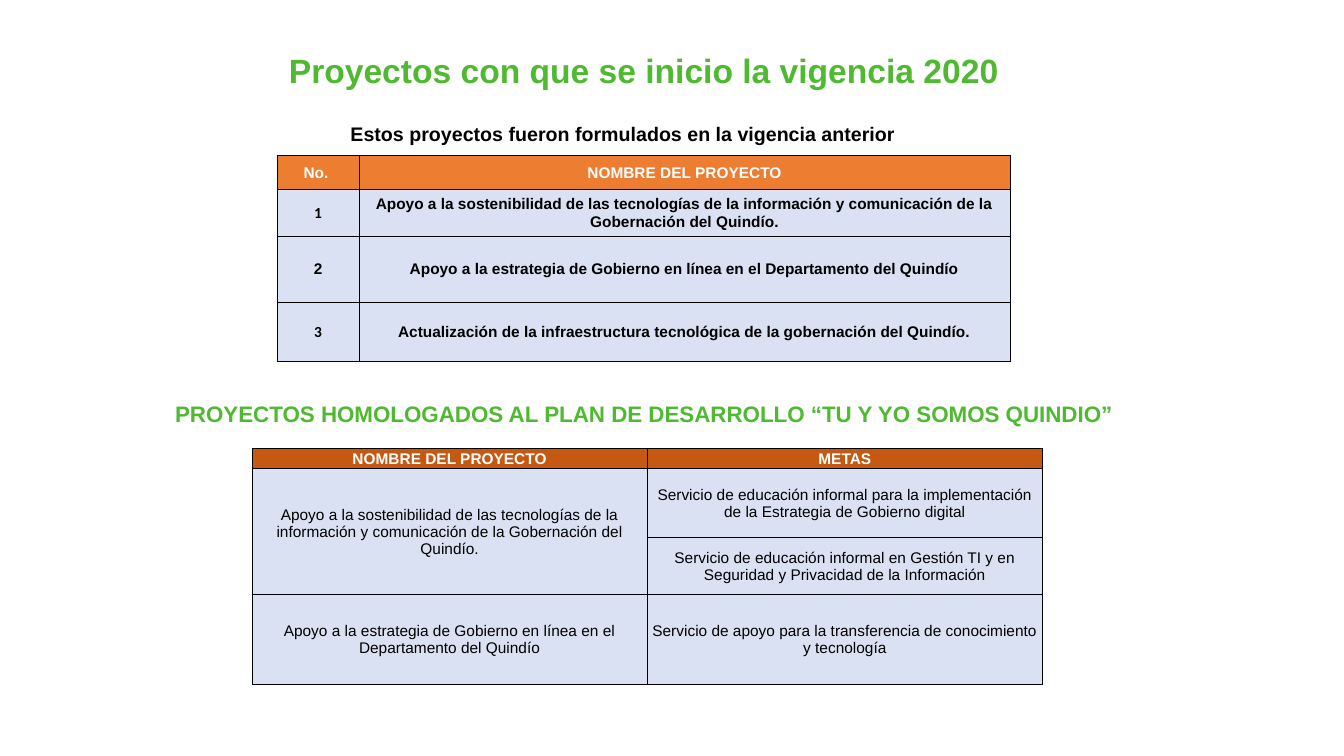
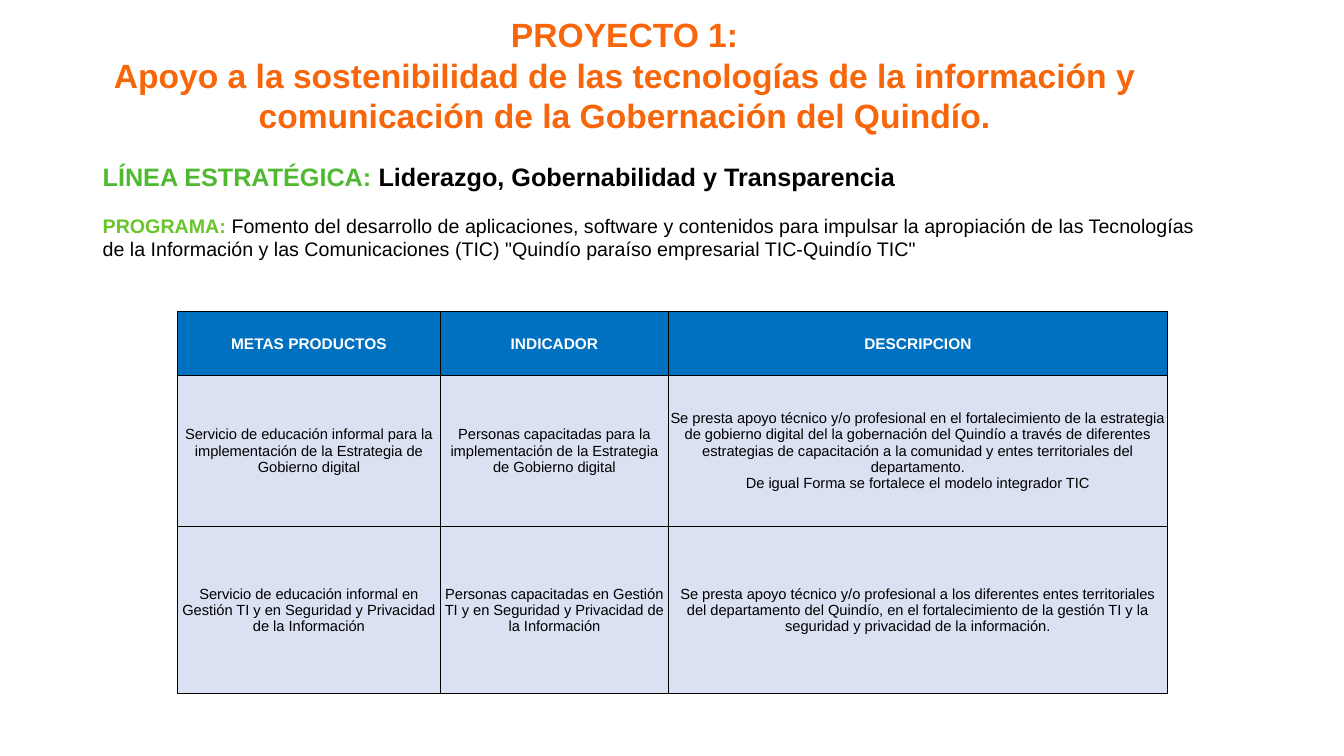
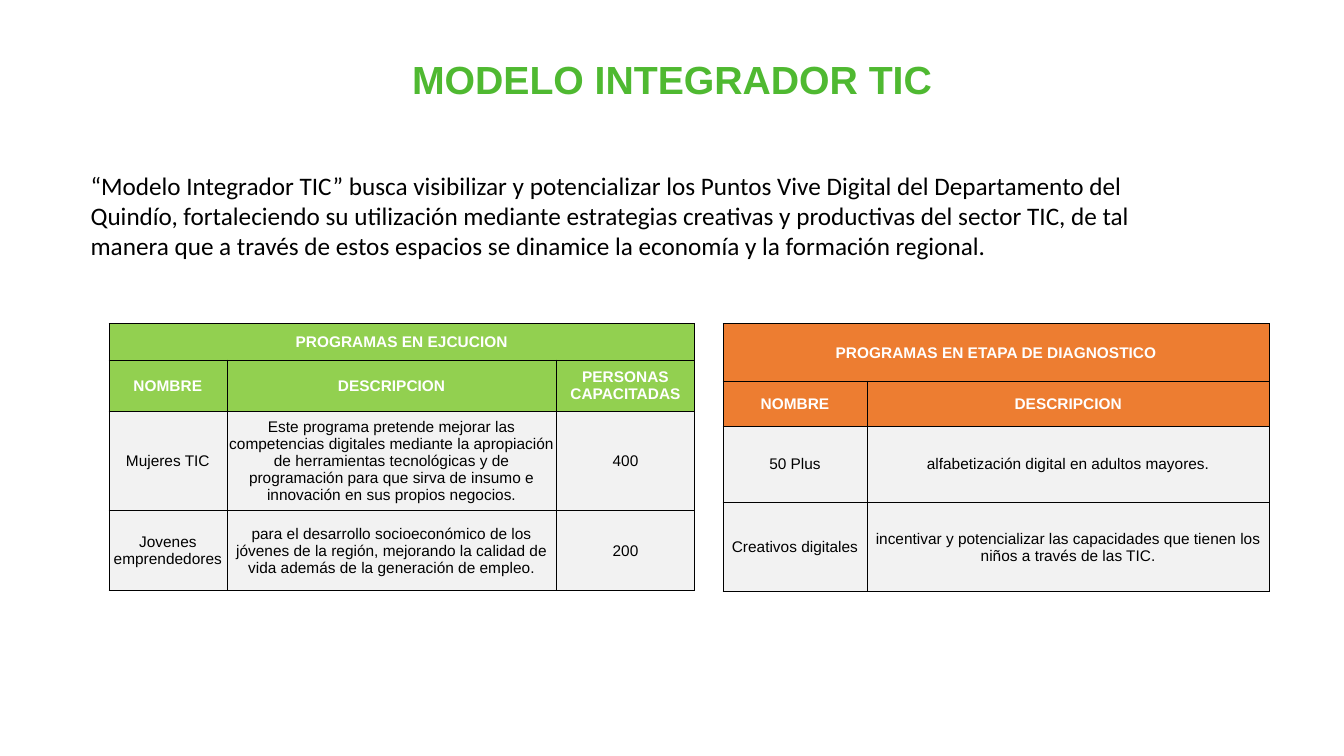
"""Builds three slides about the technology projects of Quindío."""
from dataclasses import dataclass

from lxml import etree
from pptx import Presentation
from pptx.dml.color import RGBColor
from pptx.enum.text import MSO_ANCHOR, MSO_AUTO_SIZE, PP_ALIGN
from pptx.oxml.ns import qn
from pptx.util import Inches, Pt

CENTER, LEFT = PP_ALIGN.CENTER, PP_ALIGN.LEFT
TOP, MIDDLE = MSO_ANCHOR.TOP, MSO_ANCHOR.MIDDLE
NO_AUTOFIT = MSO_AUTO_SIZE.NONE
TITLE_ONLY = 5

BODY_FONT, NUMBER_FONT = "Arial", "Calibri"
BLACK, WHITE = "000000", "FFFFFF"
GREEN, LIME, BRIGHT_ORANGE = "4FB931", "69C529", "F7660A"
ORANGE, RUST, BLUE, LIGHT_GREEN = "ED7D31", "C65911", "0070C0", "92D050"
PALE_BLUE, PALE_GRAY = "D9E1F2", "F2F2F2"

SUPPORT_PROJECT = (
    "Apoyo a la sostenibilidad de las tecnologías de la información y "
    "comunicación de la Gobernación del Quindío."
)
ONLINE_PROJECT = "Apoyo a la estrategia de Gobierno en línea en el Departamento del Quindío"
DIGITAL_GOAL = (
    "Servicio de educación informal para la implementación de la "
    "Estrategia de Gobierno digital"
)
SECURITY_GOAL = (
    "Servicio de educación informal en Gestión TI y en Seguridad y "
    "Privacidad de la Información"
)


@dataclass(frozen=True)
class Box:
    """Position and size in inches."""

    left: float
    top: float
    width: float
    height: float

    def lengths(self):
        """Return the four values as lengths."""
        return [Inches(value) for value in (self.left, self.top, self.width, self.height)]


@dataclass(frozen=True)
class Grid:
    """A table with coloured header rows; None marks a merged cell."""

    left: float
    top: float
    columns: tuple
    heights: tuple
    header_fill: str
    body_fill: str
    rows: tuple
    header_rows: int = 1
    merges: tuple = ()
    body_size: float = 11
    body_bold: bool = False
    number_cells: tuple = ()


PROJECTS = Grid(
    2.75, 1.54, (0.81, 6.46), (0.34, 0.46, 0.66, 0.59), ORANGE, PALE_BLUE,
    (
        ("No. ", "NOMBRE DEL PROYECTO"),
        ("1", SUPPORT_PROJECT),
        ("2", ONLINE_PROJECT),
        ("3", "Actualización de la infraestructura tecnológica de la gobernación del Quindío."),
    ),
    body_bold=True, number_cells=((1, 0), (3, 0)),
)
GOALS = Grid(
    2.5, 4.45, (3.92, 3.92), (0.2, 0.68, 0.57, 0.89), RUST, PALE_BLUE,
    (
        ("NOMBRE DEL PROYECTO", "METAS"),
        (SUPPORT_PROJECT, DIGITAL_GOAL),
        (None, SECURITY_GOAL),
        (ONLINE_PROJECT, "Servicio de apoyo para la transferencia de conocimiento y tecnología"),
    ),
    merges=(((1, 0), (2, 0)),),
)
INDICATORS = Grid(
    1.76, 3.09, (2.61, 2.26, 4.95), (0.63, 1.5, 1.66), BLUE, PALE_BLUE,
    (
        ("METAS PRODUCTOS", "INDICADOR", "DESCRIPCION"),
        (
            DIGITAL_GOAL,
            "Personas capacitadas para la implementación de la Estrategia de Gobierno digital",
            "Se presta apoyo técnico y/o profesional en el fortalecimiento de la estrategia "
            "de gobierno digital del la gobernación del Quindío a través de diferentes "
            "estrategias de capacitación a la comunidad y entes territoriales del "
            "departamento.\nDe igual Forma se fortalece el modelo integrador TIC",
        ),
        (
            SECURITY_GOAL,
            "Personas capacitadas en Gestión TI y en Seguridad y Privacidad de la Información",
            "Se presta apoyo técnico y/o profesional a los diferentes entes territoriales "
            "del departamento del Quindío, en el fortalecimiento de la gestión TI y la "
            "seguridad y privacidad de la información.",
        ),
    ),
    body_size=10.5,
)
RUNNING_PROGRAMS = Grid(
    1.08, 3.21, (1.17, 3.27, 1.37), (0.36, 0.51, 0.98, 0.8), LIGHT_GREEN, PALE_GRAY,
    (
        ("PROGRAMAS EN EJCUCION", None, None),
        ("NOMBRE", "DESCRIPCION", "PERSONAS CAPACITADAS"),
        (
            "Mujeres TIC",
            "Este programa pretende mejorar las competencias digitales mediante la "
            "apropiación de herramientas tecnológicas y de programación para que sirva de "
            "insumo e innovación en sus propios negocios.",
            "400",
        ),
        (
            "Jovenes emprendedores",
            "para el desarrollo socioeconómico de los jóvenes de la región, mejorando la "
            "calidad de vida además de la generación de empleo.",
            "200",
        ),
    ),
    header_rows=2, merges=(((0, 0), (0, 2)),),
)
PLANNED_PROGRAMS = Grid(
    7.17, 3.21, (1.43, 3.99), (0.57, 0.45, 0.75, 0.89), ORANGE, PALE_GRAY,
    (
        ("PROGRAMAS EN ETAPA DE DIAGNOSTICO", None),
        ("NOMBRE", "DESCRIPCION"),
        ("50 Plus", "alfabetización digital en adultos mayores."),
        (
            "Creativos digitales",
            "incentivar y potencializar las capacidades que tienen los niños a través de las TIC.",
        ),
    ),
    header_rows=2, merges=(((0, 0), (0, 1)),),
)


def rgb(color: str) -> RGBColor:
    """Turn a hex string into a colour."""
    return RGBColor.from_string(color)


def write_run(paragraph, text: str, *, size: float, color: str = BLACK,
              bold: bool = False, font: str = BODY_FONT) -> None:
    """Append formatted text to a paragraph."""
    run = paragraph.add_run()
    run.text = text
    run.font.name = font
    run.font.size = Pt(size)
    run.font.bold = bold
    run.font.color.rgb = rgb(color)


def write_text(frame, text: str, *, align=CENTER, line_spacing: float = 1.0, **style) -> None:
    """Fill a text frame with one paragraph per line of text."""
    for index, line in enumerate(text.split("\n")):
        paragraph = frame.add_paragraph() if index else frame.paragraphs[0]
        paragraph.alignment = align
        paragraph.line_spacing = line_spacing
        write_run(paragraph, line, **style)


def add_text_frame(slide, box: Box):
    """Add a wrapping text box and return its frame."""
    frame = slide.shapes.add_textbox(*box.lengths()).text_frame
    frame.word_wrap = True
    return frame


def add_titled_slide(presentation, title: str, box: Box, **style):
    """Add a slide and format its title placeholder."""
    slide = presentation.slides.add_slide(presentation.slide_layouts[TITLE_ONLY])
    shape = slide.shapes.title
    shape.left, shape.top, shape.width, shape.height = box.lengths()
    frame = shape.text_frame
    frame.word_wrap = True
    frame.auto_size = NO_AUTOFIT
    frame.vertical_anchor = TOP
    write_text(frame, title, bold=True, **style)
    return slide


def add_borders(cell) -> None:
    """Draw a thin black line on each side of a cell."""
    properties = cell._tc.get_or_add_tcPr()
    for side in ("a:lnL", "a:lnR", "a:lnT", "a:lnB"):
        line = etree.SubElement(properties, qn(side), w=str(Pt(0.5)))
        fill = etree.SubElement(line, qn("a:solidFill"))
        etree.SubElement(fill, qn("a:srgbClr"), val=BLACK)


def add_grid(slide, grid: Grid) -> None:
    """Draw a table with its fills, borders and text."""
    box = Box(grid.left, grid.top, sum(grid.columns), sum(grid.heights))
    table = slide.shapes.add_table(
        len(grid.heights), len(grid.columns), *box.lengths()).table
    table.first_row = table.horz_banding = False
    for column, width in zip(table.columns, grid.columns):
        column.width = Inches(width)
    for row, height in zip(table.rows, grid.heights):
        row.height = Inches(height)
    for row_index, texts in enumerate(grid.rows):
        header = row_index < grid.header_rows
        for column_index, text in enumerate(texts):
            cell = table.cell(row_index, column_index)
            cell.margin_left = cell.margin_right = cell.margin_top = Inches(0.01)
            cell.margin_bottom = 0
            cell.vertical_anchor = MIDDLE
            add_borders(cell)
            cell.fill.solid()
            cell.fill.fore_color.rgb = rgb(grid.header_fill if header else grid.body_fill)
            if text is not None:
                numbered = (row_index, column_index) in grid.number_cells
                write_text(
                    cell.text_frame, text,
                    size=11 if header else grid.body_size,
                    color=WHITE if header else BLACK,
                    bold=header or grid.body_bold,
                    font=NUMBER_FONT if numbered else BODY_FONT,
                )
    for first, last in grid.merges:
        table.cell(*first).merge(table.cell(*last))


def add_projects_slide(presentation) -> None:
    """Add the starting projects and their goals."""
    slide = add_titled_slide(
        presentation, "Proyectos con que se inicio la vigencia 2020",
        Box(2.5, 0.49, 7.77, 0.48), size=24, color=GREEN, line_spacing=0.9)
    write_text(
        add_text_frame(slide, Box(3.25, 1.19, 5.86, 0.48)),
        "Estos proyectos fueron formulados en la vigencia anterior",
        size=14, bold=True, line_spacing=0.9)
    add_grid(slide, PROJECTS)
    write_text(
        add_text_frame(slide, Box(0.61, 3.95, 11.56, 0.37)),
        "PROYECTOS HOMOLOGADOS AL PLAN DE DESARROLLO “TU Y YO SOMOS QUINDIO”",
        size=16, color=GREEN, bold=True, line_spacing=0.9)
    add_grid(slide, GOALS)


def add_support_slide(presentation) -> None:
    """Add the first project with its indicators."""
    slide = add_titled_slide(
        presentation, f"PROYECTO 1:\n{SUPPORT_PROJECT}",
        Box(0.92, 0.09, 10.55, 1.31), size=24, color=BRIGHT_ORANGE)
    frame = add_text_frame(slide, Box(0.92, 1.55, 11.28, 1.11))
    strategy = frame.paragraphs[0]
    write_run(strategy, "LÍNEA ESTRATÉGICA: ", size=18, color=GREEN, bold=True)
    write_run(strategy, "Liderazgo, Gobernabilidad y Transparencia", size=18, bold=True)
    program = frame.add_paragraph()
    program.space_before = Pt(16)
    write_run(program, "PROGRAMA: ", size=14, color=LIME, bold=True)
    write_run(
        program,
        "Fomento del desarrollo de aplicaciones, software y contenidos para impulsar la "
        "apropiación de las Tecnologías de la Información y las Comunicaciones (TIC) "
        '"Quindío paraíso empresarial TIC-Quindío TIC"', size=14)
    add_grid(slide, INDICATORS)


def add_model_slide(presentation) -> None:
    """Add the integrating model and its programs."""
    slide = add_titled_slide(
        presentation, "MODELO INTEGRADOR TIC",
        Box(3.68, 0.5, 5.97, 0.57), size=28, color=GREEN)
    write_text(
        add_text_frame(slide, Box(0.8, 1.64, 11.11, 1.01)),
        "“Modelo Integrador TIC” busca visibilizar y potencializar los Puntos Vive Digital "
        "del Departamento del Quindío, fortaleciendo su utilización mediante estrategias "
        "creativas y productivas del sector TIC, de tal manera que a través de estos "
        "espacios se dinamice la economía y la formación regional.",
        size=18, font=NUMBER_FONT, align=LEFT)
    for grid in (RUNNING_PROGRAMS, PLANNED_PROGRAMS):
        add_grid(slide, grid)


def main() -> None:
    """Build and save the presentation."""
    presentation = Presentation()
    presentation.slide_width = Inches(13.33)
    presentation.slide_height = Inches(7.5)
    add_projects_slide(presentation)
    add_support_slide(presentation)
    add_model_slide(presentation)
    presentation.save("out.pptx")


if __name__ == "__main__":
    main()
